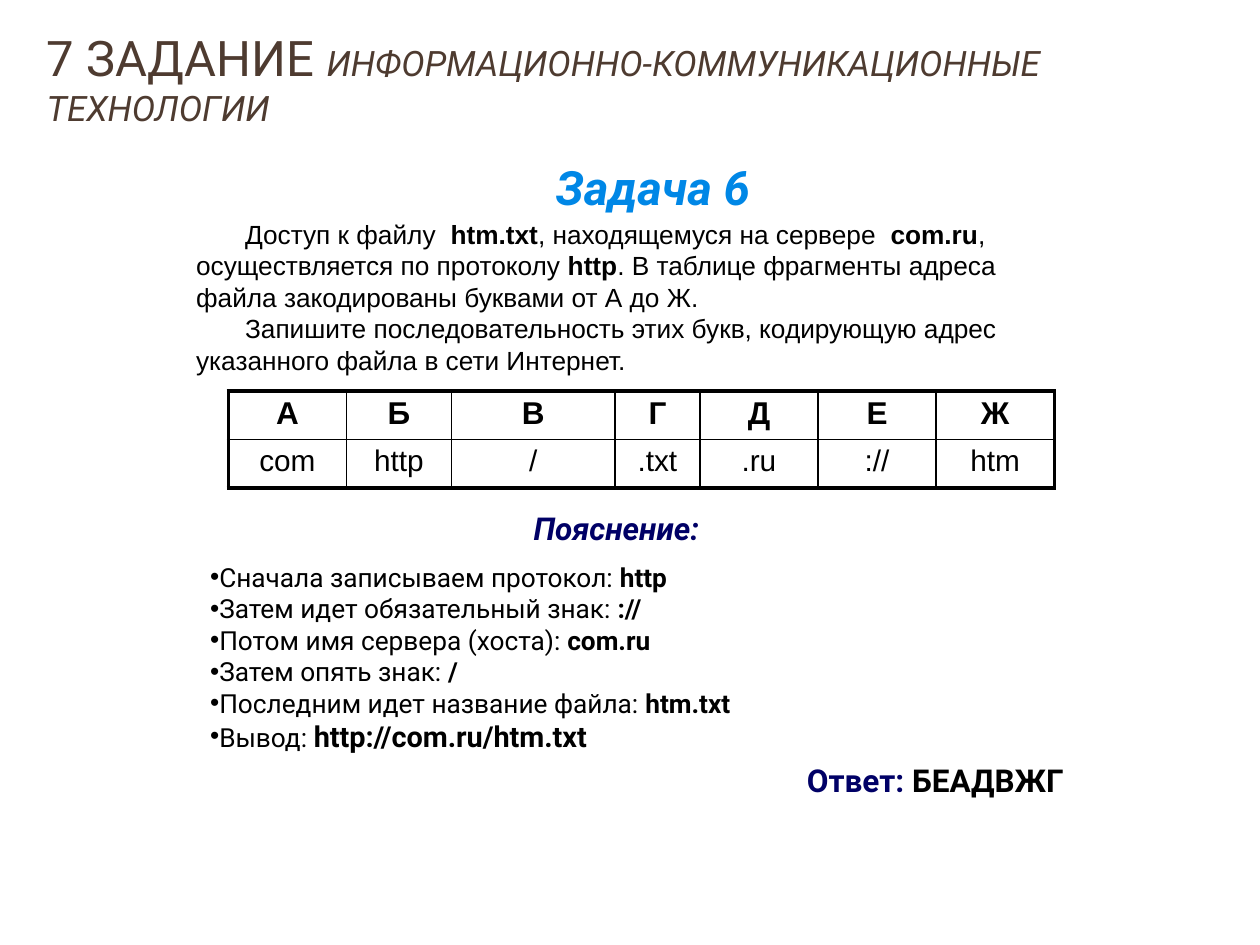
"""Build a slide with an informatics task on file addresses, its explanation and its answer."""
from lxml.etree import SubElement
from pptx import Presentation
from pptx.dml.color import RGBColor
from pptx.enum.text import MSO_ANCHOR, MSO_AUTO_SIZE, PP_ALIGN
from pptx.oxml import parse_xml
from pptx.oxml.ns import nsdecls, qn
from pptx.util import Pt

BLACK = RGBColor(0x00, 0x00, 0x00)
BROWN = RGBColor(0x4E, 0x3B, 0x30)
BLUE = RGBColor(0x00, 0x87, 0xE6)
NAVY = RGBColor(0x00, 0x00, 0x66)


def add_text_frame(slide, left, top, width, height):
    text_frame = slide.shapes.add_textbox(Pt(left), Pt(top), Pt(width), Pt(height)).text_frame
    text_frame.word_wrap = True
    return text_frame


def write_paragraph(paragraph, parts, size, font_name, color=BLACK):
    """Write the parts as runs; every second part is bold."""
    for index, part in enumerate(parts):
        run = paragraph.add_run()
        run.text = part
        run.font.bold = index % 2 == 1
    paragraph.font.size = Pt(size)
    paragraph.font.name = font_name
    paragraph.font.color.rgb = color


presentation = Presentation()
presentation.slide_width = Pt(720)
presentation.slide_height = Pt(540)
slide = presentation.slides.add_slide(presentation.slide_layouts[5])

title = slide.shapes.title
title.left, title.top, title.width, title.height = Pt(19.5), Pt(11.5), Pt(684), Pt(66)
title.text_frame.auto_size = MSO_AUTO_SIZE.NONE
title.text_frame.vertical_anchor = MSO_ANCHOR.MIDDLE
title_paragraph = title.text_frame.paragraphs[0]
title_paragraph.alignment = PP_ALIGN.LEFT
title_paragraph.font.name = "Roboto"
title_paragraph.font.color.rgb = BROWN
for text, size, italic in (
    ("7 ЗАДАНИЕ ", 28, False),
    ("ИНФОРМАЦИОННО-КОММУНИКАЦИОННЫЕ ТЕХНОЛОГИИ", 20, True),
):
    run = title_paragraph.add_run()
    run.text = text
    run.font.size = Pt(size)
    run.font.italic = italic

headings = (
    ("Задача 6", 27, BLUE, (302, 87, 142, 31)),
    ("Пояснение:", 18, NAVY, (255, 287.5, 194.5, 29)),
)
for text, size, color, box in headings:
    paragraph = add_text_frame(slide, *box).paragraphs[0]
    paragraph.alignment = PP_ALIGN.CENTER
    write_paragraph(paragraph, ["", text], size, "Roboto", color)
    paragraph.font.italic = True

task_paragraphs = (
    ("Доступ к файлу  ", "htm.txt", ", находящемуся на сервере  ", "com.ru",
     ", осуществляется по протоколу ", "http",
     ". В таблице фрагменты адреса файла закодированы буквами от А до Ж."),
    ("Запишите последовательность этих букв, кодирующую адрес указанного файла в сети Интернет.",),
)
task_frame = add_text_frame(slide, 105, 121, 515, 98)
for index, parts in enumerate(task_paragraphs):
    paragraph = task_frame.add_paragraph() if index else task_frame.paragraphs[0]
    properties = paragraph._p.get_or_add_pPr()
    properties.set("marL", "0")
    properties.set("indent", str(Pt(28)))
    write_paragraph(paragraph, parts, 15, "Arial")

fragments = {"А": "com", "Б": "http", "В": "/", "Г": ".txt", "Д": ".ru", "Е": "://", "Ж": "htm"}
column_widths = (67.5, 60, 93.5, 48.5, 67.5, 67.5, 67.5)
table = slide.shapes.add_table(
    2, len(fragments), Pt(130.5), Pt(223.5), Pt(sum(column_widths)), Pt(55.5)
).table
table.first_row = False
table.horz_banding = False
for column, width in zip(table.columns, column_widths):
    column.width = Pt(width)

last_column = len(fragments) - 1
for row_index, row_texts in enumerate((fragments.keys(), fragments.values())):
    table.rows[row_index].height = Pt(27.75)
    for column_index, text in enumerate(row_texts):
        cell = table.cell(row_index, column_index)
        cell.margin_left = cell.margin_right = Pt(5)
        cell.margin_top = cell.margin_bottom = Pt(3)
        cell.fill.background()
        paragraph = cell.text_frame.paragraphs[0]
        paragraph.alignment = PP_ALIGN.CENTER
        is_header = row_index == 0
        write_paragraph(paragraph, ["", text] if is_header else [text], 18 if is_header else 17, "Arial")
        outer_sides = {
            "L": column_index == 0,
            "R": column_index == last_column,
            "T": row_index == 0,
            "B": row_index == 1,
        }
        for position, (side, is_outer) in enumerate(outer_sides.items()):
            border = parse_xml(
                f'<a:ln{side} {nsdecls("a")} w="{Pt(2.25 if is_outer else 1)}">'
                f'<a:solidFill><a:srgbClr val="{BLACK}"/></a:solidFill></a:ln{side}>'
            )
            cell._tc.get_or_add_tcPr().insert(position, border)

steps = (
    ("Сначала записываем протокол: ", "http"),
    ("Затем идет обязательный знак: ", "://"),
    ("Потом имя сервера (хоста): ", "com.ru"),
    ("Затем опять знак: ", "/"),
    ("Последним идет название файла: ", "htm.txt"),
    ("Вывод: ", "http://com.ru/htm.txt"),
)
steps_frame = add_text_frame(slide, 113, 317, 469, 118)
for index, parts in enumerate(steps):
    paragraph = steps_frame.add_paragraph() if index else steps_frame.paragraphs[0]
    properties = paragraph._p.get_or_add_pPr()
    properties.set("marL", "0")
    properties.set("indent", "0")
    SubElement(properties, qn("a:buFont")).set("typeface", "Arial")
    SubElement(properties, qn("a:buChar")).set("char", "•")
    write_paragraph(paragraph, parts, 15, "Roboto")
paragraph.runs[-1].font.size = Pt(16.5)

answer_paragraph = add_text_frame(slide, 449.5, 431.5, 165.5, 29).paragraphs[0]
answer_paragraph.alignment = PP_ALIGN.RIGHT
write_paragraph(answer_paragraph, ["", "Ответ:", "", " БЕАДВЖГ"], 18, "Roboto")
answer_paragraph.runs[1].font.color.rgb = NAVY

presentation.save("out.pptx")
